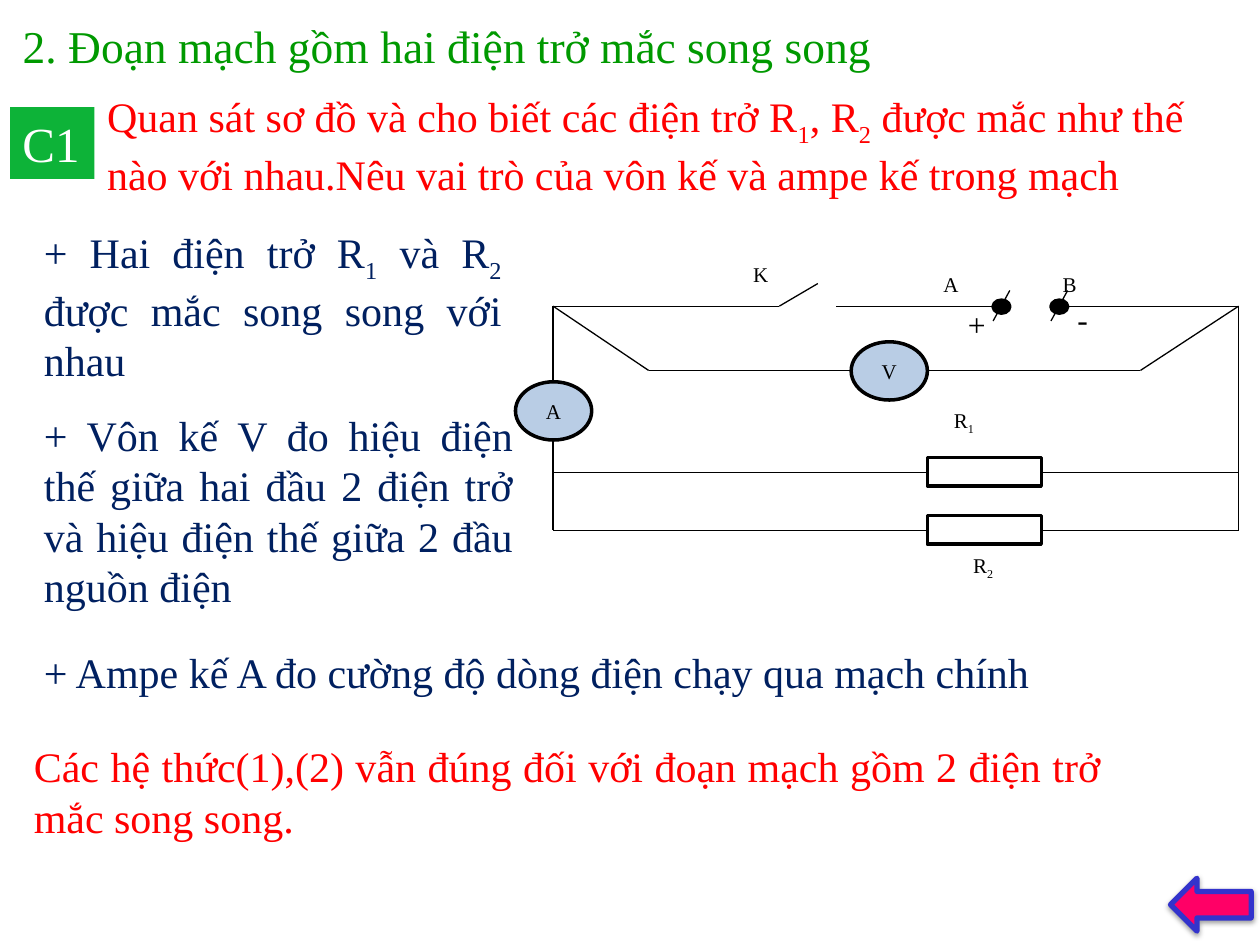
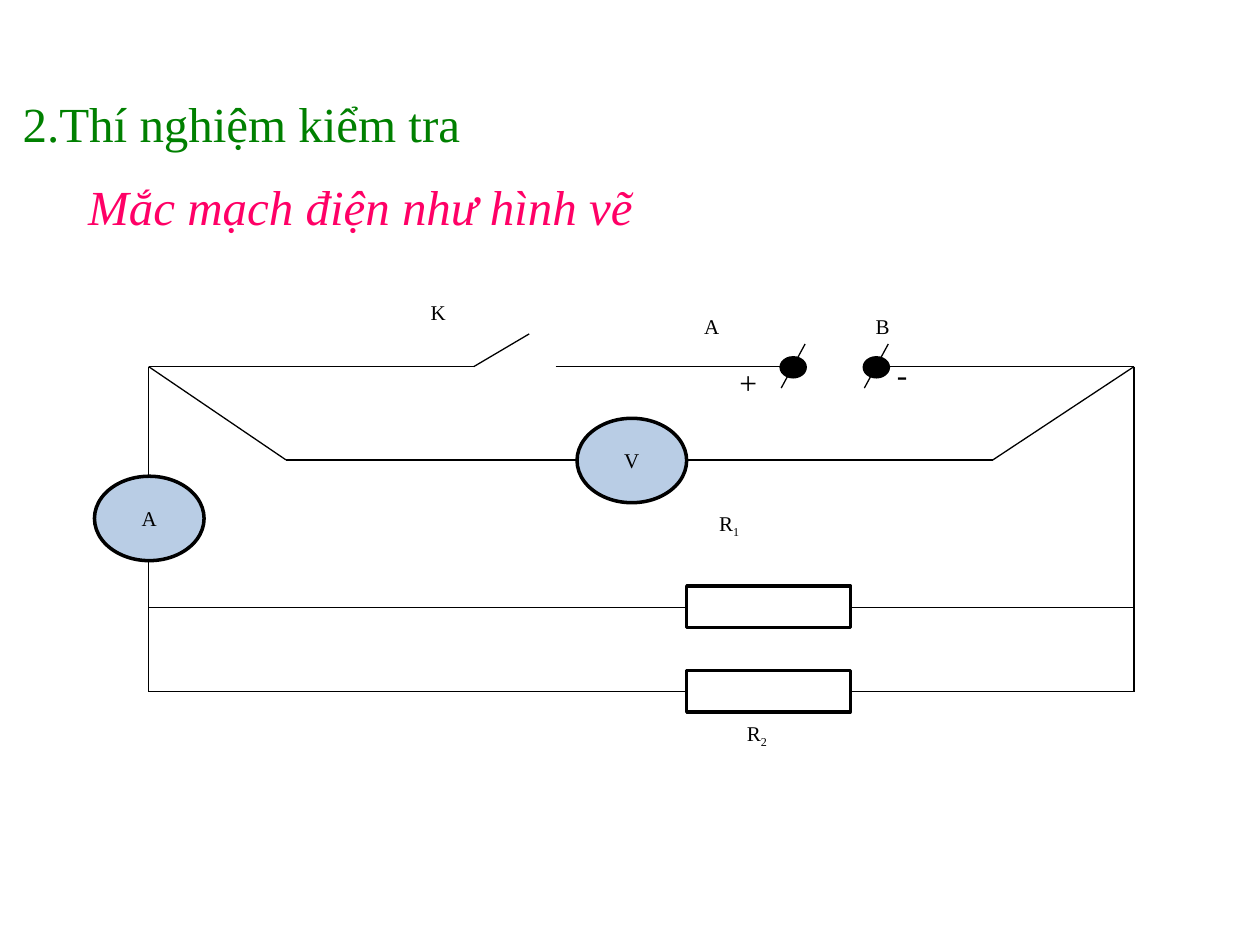
import pptx
import pptx.dml.color
import pptx.enum.shapes
import pptx.enum.text
import pptx.oxml.ns
import pptx.util
from lxml import etree

Inches = pptx.util.Inches
Pt = pptx.util.Pt
SHAPE = pptx.enum.shapes.MSO_SHAPE
ALIGN = pptx.enum.text.PP_ALIGN
ANCHOR = pptx.enum.text.MSO_ANCHOR
qn = pptx.oxml.ns.qn

FONT = "Times New Roman"
BLACK, WHITE = "000000", "FFFFFF"
RED, NAVY, PINK = "FF0000", "002060", "FF0066"
METER_BLUE = "B9CDE5"


def color(value):
    return pptx.dml.color.RGBColor.from_string(value)


def write(shape, text, size=24, ink=BLACK, align=ALIGN.LEFT, anchor=ANCHOR.TOP,
          italic=False, bottom=0.05):
    frame = shape.text_frame
    frame.word_wrap = True
    frame.auto_size = pptx.enum.text.MSO_AUTO_SIZE.NONE
    frame.vertical_anchor = anchor
    frame.margin_bottom = Inches(bottom)
    para = frame.paragraphs[0]
    para.alignment = align
    para.space_before = Pt(0)
    for index, piece in enumerate(text.split("~")):
        span = para.add_run()
        span.text = piece
        span.font.name = FONT
        span.font.size = Pt(size)
        span.font.italic = italic
        span.font.color.rgb = color(ink)
        if index % 2:
            span.font._element.set("baseline", "-25000")
    return para


class Lesson:
    def __init__(self):
        self.deck = pptx.Presentation()
        self.deck.slide_width = Inches(10)
        self.deck.slide_height = Inches(7.5)
        self.page = None
        self.canvas = None
        self.place = None

    def new_page(self):
        self.page = self.deck.slides.add_slide(self.deck.slide_layouts[1])
        self.canvas = self.page.shapes
        self.set_frame(0, 0, 0, 0, 1, 1)

    def set_frame(self, from_x, from_y, to_x, to_y, scale_x, scale_y):
        self.scale = scale_x, scale_y
        self.place = lambda x, y: (Inches(to_x + (x - from_x) * scale_x),
                                   Inches(to_y + (y - from_y) * scale_y))

    def bounds(self, left, top, width, height):
        return (*self.place(left, top),
                Inches(width * self.scale[0]), Inches(height * self.scale[1]))

    def placeholder(self, index, box, text, **style):
        holder = self.page.placeholders[index]
        holder.left, holder.top, holder.width, holder.height = self.bounds(*box)
        para = write(holder, text, **style)
        if index:
            properties = para._p.get_or_add_pPr()
            properties.set("marL", "0")
            properties.set("indent", "0")
            etree.SubElement(properties, qn("a:buNone"))

    def title(self, box, text, **style):
        self.placeholder(0, box, text, anchor=ANCHOR.MIDDLE, **style)

    def body(self, box, text, **style):
        self.placeholder(1, box, text, **style)

    def text(self, box, text, **style):
        write(self.canvas.add_textbox(*self.bounds(*box)), text, **style)

    def shape(self, kind, box, fill, line=BLACK, weight=2):
        shape = self.canvas.add_shape(kind, *self.bounds(*box))
        shape.shadow.inherit = False
        shape.fill.solid()
        shape.fill.fore_color.rgb = color(fill)
        if line:
            shape.line.color.rgb = color(line)
            shape.line.width = Pt(weight)
        else:
            shape.line.fill.background()
        return shape

    def wire(self, *points):
        for start, end in zip(points, points[1:]):
            line = self.canvas.add_connector(
                pptx.enum.shapes.MSO_CONNECTOR.STRAIGHT, *self.place(*start), *self.place(*end))
            line.line.color.rgb = color(BLACK)
            line.line.width = Pt(0.75)
            etree.SubElement(line._element.spPr, qn("a:effectLst"))

    def meter(self, left, top, name):
        meter = self.shape(SHAPE.OVAL, (left, top, 0.87, 0.67), METER_BLUE)
        write(meter, name, size=12, align=ALIGN.CENTER, anchor=ANCHOR.MIDDLE)

    def back_arrow(self, box):
        arrow = self.shape(SHAPE.LEFT_ARROW, box, PINK, "3333CC", 3)
        effects = arrow._element.spPr.find(qn("a:effectLst"))
        shadow = etree.SubElement(effects, qn("a:outerShdw"), blurRad=str(Pt(3.1)),
                                  dist=str(Pt(1.6)), dir="5400000", rotWithShape="0")
        ink = etree.SubElement(shadow, qn("a:srgbClr"), val=BLACK)
        etree.SubElement(ink, qn("a:alpha"), val="38000")

    def circuit(self, left, top, width, height):
        west, east, north, south = 1.18, 9, 2.91, 5.49
        volt_y, resistor_left, resistor_width = 3.65, 5.45, 1.3
        resistor_right = resistor_left + resistor_width
        self.set_frame(west, north, left, top,
                       width / (east - west), height / (south - north))
        self.canvas = self.page.shapes.add_group_shape().shapes

        self.wire((west, north), (3.76, north), (4.2, 2.65))
        self.wire((4.41, north), (6.2, north))
        self.wire((7.05, north), (east, north), (east, south))
        self.wire((west, north), (west, 3.78))
        self.wire((west, 4.45), (west, south))
        self.wire((west, north), (2.27, volt_y), (4.58, volt_y))
        self.wire((5.45, volt_y), (7.88, volt_y), (east, north))
        for terminal in (6.2, 6.86):
            self.shape(SHAPE.OVAL, (terminal, 2.84, 0.19, 0.15), BLACK)
            self.wire((terminal + 0.19, 2.73), (terminal, 3.08))
        for y in (4.82, south):
            self.wire((west, y), (resistor_left, y))
            self.wire((resistor_right, y), (east, y))
            self.shape(SHAPE.RECTANGLE,
                       (resistor_left, y - 0.17, resistor_width, 0.33), WHITE)
        self.meter(0.75, 3.78, "A")
        self.meter(4.58, 3.32, "V")

        labels = [
            (3.32, 2.33, 0.84, "K", 12),
            (5.49, 2.44, 0.84, "A", 12),
            (6.85, 2.44, 0.82, "B", 12),
            (5.61, 4, 0.96, "R~1", 12),
            (5.83, 5.67, 0.96, "R~2", 12),
            (5.77, 2.83, 0.55, "+", 18),
            (7.02, 2.77, 0.55, "-", 18),
        ]
        for x, y, label_width, label, size in labels:
            self.text((x, y, label_width, 0.61), label, size=size)


def parallel_page(lesson):
    lesson.new_page()
    lesson.title((0.08, 0.05, 9, 0.62), "2. Đoạn mạch gồm hai điện trở mắc song song",
                 size=26, ink="009900", align=ALIGN.JUSTIFY)
    lesson.body((0.75, 0.67, 9.2, 0.92),
                "Quan sát sơ đồ và cho biết các điện trở R~1~, R~2~ được mắc như thế nào "
                "với nhau.Nêu vai trò của vôn kế và ampe kế trong mạch", ink=RED)
    answers = [
        ((0.25, 1.75, 3.83, 1.31), NAVY,
         "+ Hai điện trở R~1~ và R~2~ được mắc song song với nhau"),
        ((0.25, 3.2, 3.92, 1.72), NAVY,
         "+ Vôn kế V đo hiệu điện thế giữa hai đầu 2 điện trở "
         "và hiệu điện thế giữa 2 đầu nguồn điện"),
        ((0.25, 5.08, 8.67, 0.5), NAVY,
         "+ Ampe kế A đo cường độ dòng điện chạy qua mạch chính"),
        ((0.17, 5.83, 8.67, 0.91), RED,
         "Các hệ thức(1),(2) vẫn đúng đối với đoạn mạch gồm 2 điện trở mắc song song."),
    ]
    for box, ink, answer in answers:
        lesson.text(box, answer, ink=ink, align=ALIGN.JUSTIFY)
    lesson.back_arrow((9.29, 6.97, 0.64, 0.42))
    question = lesson.shape(SHAPE.RECTANGLE, (0.08, 0.85, 0.67, 0.57), "0DB338", line=None)
    write(question, "C1", size=28, ink=WHITE)
    lesson.circuit(4.39, 2.43, 5.44, 1.78)


def experiment_page(lesson):
    lesson.new_page()
    lesson.title((0.08, 0.58, 9, 1.25), "2.Thí nghiệm kiểm tra",
                 size=28, ink="008000", bottom=0.51)
    lesson.body((0.6, 1.35, 9, 4.95), "Mắc mạch điện như hình vẽ",
                size=28, ink=PINK, italic=True)
    lesson.circuit(1.18, 2.91, 7.82, 2.58)


def main():
    lesson = Lesson()
    parallel_page(lesson)
    experiment_page(lesson)
    lesson.deck.save("out.pptx")


if __name__ == "__main__":
    main()
